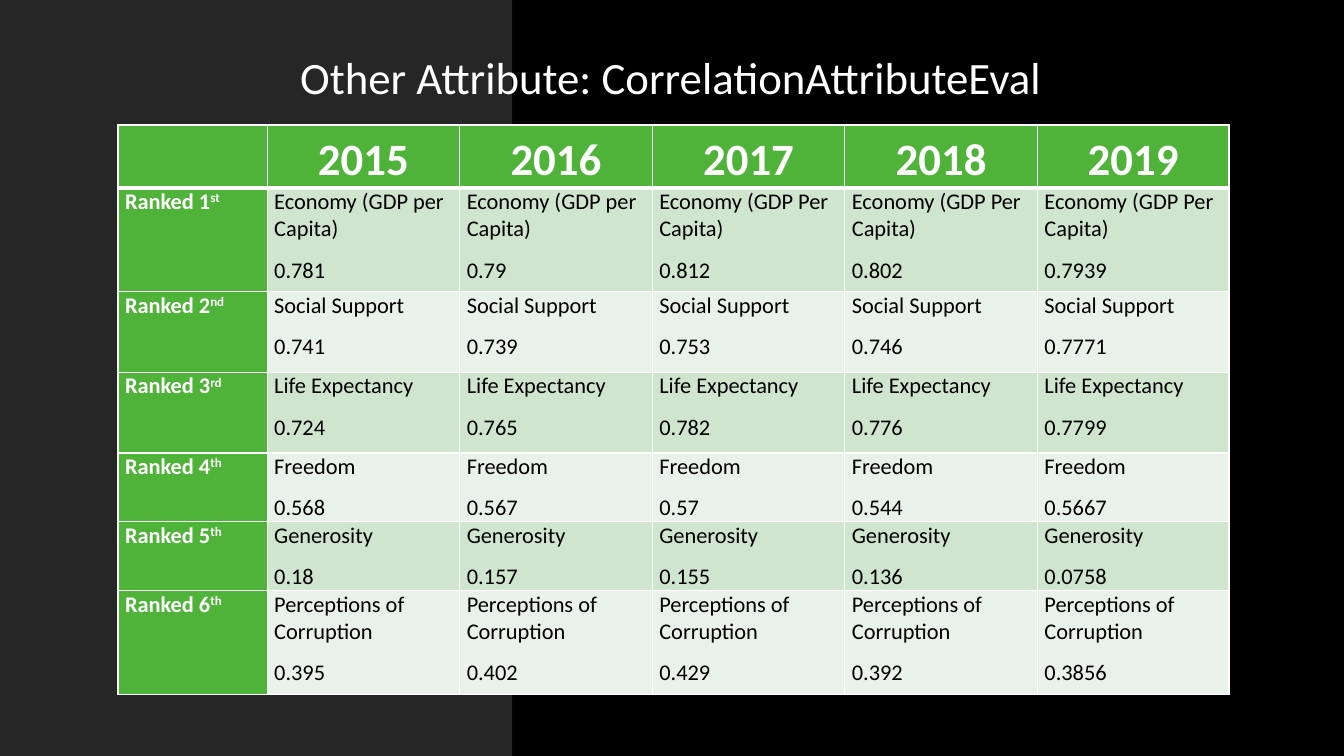
from lxml import etree
from pptx import Presentation
from pptx.dml.color import RGBColor
from pptx.enum.shapes import MSO_SHAPE
from pptx.enum.text import MSO_ANCHOR, MSO_AUTO_SIZE, PP_ALIGN
from pptx.oxml.ns import qn
from pptx.util import Inches, Pt

RECTANGLE = MSO_SHAPE.RECTANGLE
TOP = MSO_ANCHOR.TOP
NO_AUTOFIT = MSO_AUTO_SIZE.NONE
LEFT, CENTER = PP_ALIGN.LEFT, PP_ALIGN.CENTER
TITLE_ONLY = 5

COLORS = {
    "black": "000000",
    "charcoal": "262626",
    "white": "FFFFFF",
    "green": "50B339",
    "dark_band": "D0E5CE",
    "light_band": "E9F2E8",
}

YEARS = ["2015", "2016", "2017", "2018", "2019"]
ORDINALS = ["st", "nd", "rd", "th", "th", "th"]
GDP_LOWER, GDP_UPPER = "Economy (GDP per Capita)", "Economy (GDP Per Capita)"
RANKINGS = [
    ([GDP_LOWER] * 2 + [GDP_UPPER] * 3, ["0.781", "0.79", "0.812", "0.802", "0.7939"]),
    (["Social Support"] * 5, ["0.741", "0.739", "0.753", "0.746", "0.7771"]),
    (["Life Expectancy"] * 5, ["0.724", "0.765", "0.782", "0.776", "0.7799"]),
    (["Freedom"] * 5, ["0.568", "0.567", "0.57", "0.544", "0.5667"]),
    (["Generosity"] * 5, ["0.18", "0.157", "0.155", "0.136", "0.0758"]),
    (["Perceptions of Corruption"] * 5, ["0.395", "0.402", "0.429", "0.392", "0.3856"]),
]
COLUMN_WIDTHS = [1.48, 1.91, 1.91, 1.91, 1.91, 1.9]
ROW_HEIGHTS = [0.51, 1.03, 0.8, 0.8, 0.6, 0.6, 1.03]


def rgb(name):
    return RGBColor.from_string(COLORS[name])


class SlideBuilder:
    font = "Calibri"

    def __init__(self, page):
        self.page = page

    def background(self, color):
        fill = self.page.background.fill
        fill.solid()
        fill.fore_color.rgb = rgb(color)

    def style(self, span, size, color, bold=False):
        span.font.name = self.font
        span.font.size = Pt(size)
        span.font.bold = bold
        span.font.color.rgb = rgb(color)

    def panel(self, width, height, color):
        """Add a flat rectangle at the top left corner, behind the title."""
        box = self.page.shapes.add_shape(RECTANGLE, 0, 0, width, height)
        box.shadow.inherit = False
        box.fill.solid()
        box.fill.fore_color.rgb = rgb(color)
        box.line.fill.background()
        self.page.shapes.title.element.addprevious(box.element)

    def title(self, text, left, top, width, height):
        box = self.page.shapes.title
        box.left, box.top, box.width, box.height = left, top, width, height
        frame = box.text_frame
        frame.text = text
        frame.word_wrap = True
        frame.auto_size = NO_AUTOFIT
        frame.vertical_anchor = TOP
        para = frame.paragraphs[0]
        para.alignment = CENTER
        self.style(para.runs[0], 32, "white")

    def table(self, left, top, widths, heights):
        frame = self.page.shapes.add_table(
            len(heights), len(widths), left, top,
            Inches(sum(widths)), Inches(sum(heights)))
        table = frame.table
        for column, width in zip(table.columns, widths):
            column.width = Inches(width)
        for row, height in zip(table.rows, heights):
            row.height = Inches(height)
        return table

    def cell(self, cell, text, fill, color="black", size=16, bold=False,
             align=LEFT, top_border=1, bottom_border=1):
        cell.margin_left = cell.margin_right = Inches(0.07)
        cell.margin_top = cell.margin_bottom = 0
        cell.fill.solid()
        cell.fill.fore_color.rgb = rgb(fill)
        self.borders(cell, top_border, bottom_border)
        cell.text_frame.text = text
        for para in cell.text_frame.paragraphs:
            para.alignment = align
            para.space_before = Pt(10)
            for span in para.runs:
                self.style(span, size, color, bold)

    def borders(self, cell, top, bottom):
        properties = cell._tc.get_or_add_tcPr()
        sides = [("L", 1), ("R", 1), ("T", top), ("B", bottom)]
        for position, (side, width) in enumerate(sides):
            line = etree.Element(qn(f"a:ln{side}"), w=str(Pt(width)))
            fill = etree.SubElement(line, qn("a:solidFill"))
            etree.SubElement(fill, qn("a:srgbClr"), val=COLORS["white"])
            properties.insert(position, line)

    def superscript(self, cell, text, size):
        span = cell.text_frame.paragraphs[0].add_run()
        span.text = text
        self.style(span, size, "white", bold=True)
        span._r.get_or_add_rPr().set("baseline", "30000")


def main():
    deck = Presentation()
    deck.slide_width, deck.slide_height = Inches(13.33), Inches(7.5)
    page = deck.slides.add_slide(deck.slide_layouts[TITLE_ONLY])
    builder = SlideBuilder(page)

    builder.background("black")
    builder.panel(deck.slide_width, deck.slide_height, "black")
    builder.panel(Inches(5.08), deck.slide_height, "charcoal")
    builder.title("Other Attribute: CorrelationAttributeEval ",
                  Inches(0.04), Inches(0.44), Inches(13.33), Inches(0.64))

    table = builder.table(Inches(1.17), Inches(1.24), COLUMN_WIDTHS, ROW_HEIGHTS)
    for column, year in enumerate([""] + YEARS):
        header = table.cell(0, column)
        builder.cell(header, year, "green", "white", 32, True, CENTER, bottom_border=3)
        if year:
            header.text_frame.paragraphs[0].line_spacing = 1.15

    for rank, (ordinal, (names, scores)) in enumerate(zip(ORDINALS, RANKINGS), 1):
        top_border = 3 if rank == 1 else 1
        label = table.cell(rank, 0)
        builder.cell(label, f"Ranked {rank}", "green", "white", bold=True,
                     top_border=top_border)
        builder.superscript(label, ordinal, 16)
        band = "dark_band" if rank % 2 else "light_band"
        for column, (name, score) in enumerate(zip(names, scores), 1):
            builder.cell(table.cell(rank, column), f"{name}\n{score}", band,
                         top_border=top_border)

    deck.save("out.pptx")


if __name__ == "__main__":
    main()
